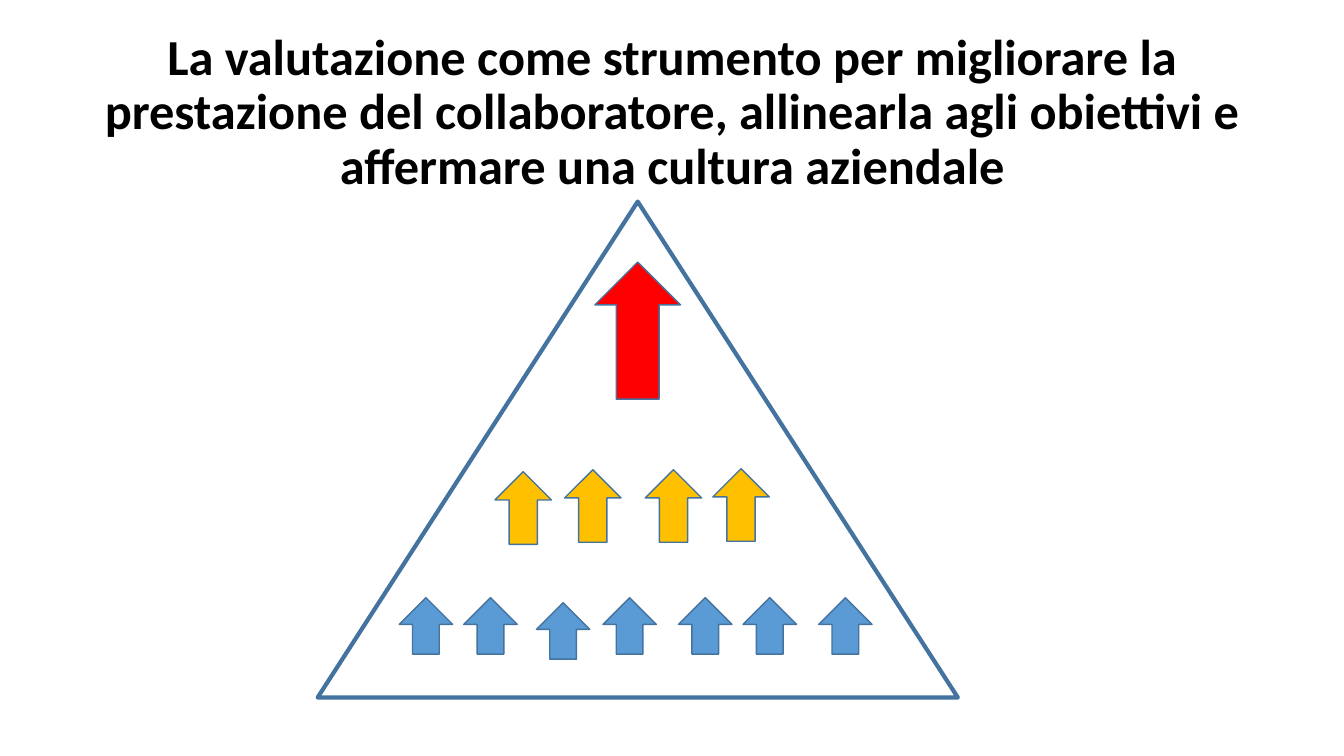
from pptx import Presentation
from pptx.dml.color import RGBColor
from pptx.enum.shapes import MSO_SHAPE as SHAPE
from pptx.enum.text import MSO_ANCHOR, MSO_AUTO_SIZE, PP_ALIGN
from pptx.util import Inches, Pt

BLACK = RGBColor(0x00, 0x00, 0x00)
OUTLINE = RGBColor(0x43, 0x73, 0x9E)
RED = RGBColor(0xFF, 0x00, 0x00)
AMBER = RGBColor(0xFF, 0xC0, 0x00)
BLUE = RGBColor(0x5B, 0x9B, 0xD5)

TITLE = ("La valutazione come strumento per migliorare la prestazione del "
         "collaboratore, allinearla agli obiettivi e affermare una cultura "
         "aziendale")

# Each level: colour, arrow width and height, (left, top) of each arrow
LEVELS = [
    (RED, 0.85, 1.36, [(5.9, 2.6)]),
    (AMBER, 0.56, 0.72, [(4.91, 4.68), (5.6, 4.66), (6.4, 4.66), (7.07, 4.65)]),
    (BLUE, 0.53, 0.56, [(3.96, 5.93), (4.6, 5.93), (5.32, 5.98), (5.98, 5.93),
                        (6.73, 5.93), (7.37, 5.93), (8.12, 5.93)]),
]


def set_title(s, text):
    sp = s.shapes.title
    sp.left, sp.top = Inches(0.92), Inches(0.4)
    sp.width, sp.height = Inches(11.5), Inches(1.45)
    tf = sp.text_frame
    tf.text = text
    tf.word_wrap = True
    tf.auto_size = MSO_AUTO_SIZE.NONE
    tf.vertical_anchor = MSO_ANCHOR.MIDDLE
    p = tf.paragraphs[0]
    p.alignment = PP_ALIGN.CENTER
    p.line_spacing = 0.9
    p.font.name = "Calibri"
    p.font.size = Pt(36)
    p.font.bold = True
    p.font.color.rgb = BLACK


def add_outlined(s, kind, left, top, width, height, line_width, fill=None):
    sp = s.shapes.add_shape(kind, Inches(left), Inches(top),
                            Inches(width), Inches(height))
    sp.shadow.inherit = False
    sp.line.color.rgb = OUTLINE
    sp.line.width = Pt(line_width)
    if fill is None:
        sp.fill.background()
    else:
        sp.fill.solid()
        sp.fill.fore_color.rgb = fill


def main():
    prs = Presentation()
    prs.slide_width, prs.slide_height = Inches(13.33), Inches(7.5)
    s = prs.slides.add_slide(prs.slide_layouts[5])

    set_title(s, TITLE)

    # Company pyramid
    add_outlined(s, SHAPE.ISOSCELES_TRIANGLE, 3.15, 2, 6.35, 4.92, 3)

    # Arrows on each level, from the top down
    for colour, width, height, places in LEVELS:
        for left, top in places:
            add_outlined(s, SHAPE.UP_ARROW, left, top, width, height, 1, colour)

    prs.save("out.pptx")


if __name__ == "__main__":
    main()
